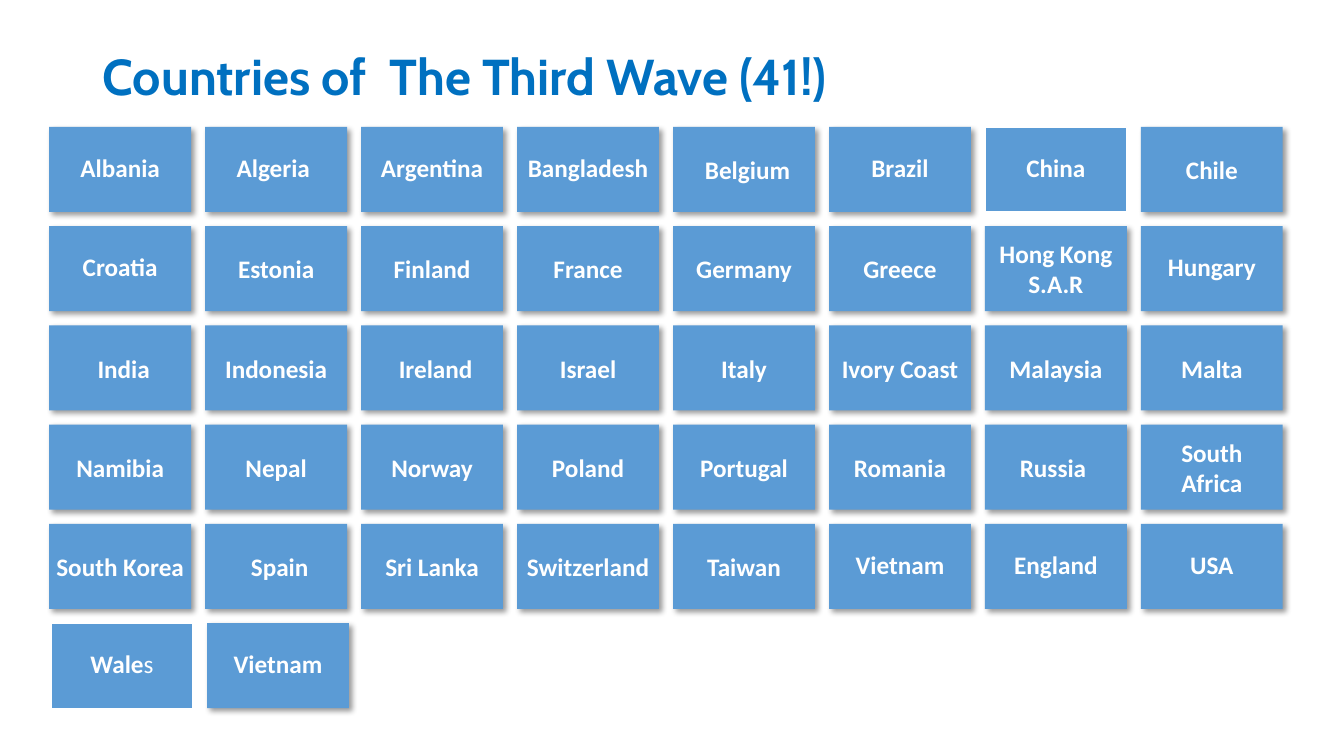
from dataclasses import dataclass

from lxml import etree
from pptx import Presentation
from pptx.dml.color import RGBColor
from pptx.enum import shapes, text
from pptx.oxml import ns
from pptx.util import Pt


@dataclass(frozen=True)
class Theme:
    title_color: RGBColor = RGBColor(0x00, 0x70, 0xC0)
    tile_color: RGBColor = RGBColor(0x5B, 0x9B, 0xD5)
    white: RGBColor = RGBColor(0xFF, 0xFF, 0xFF)
    shadow_color: str = "000000"
    title_font: str = "Cabin"
    tile_font: str = "Calibri"
    title_size: int = 36
    tile_size: int = 18


THEME = Theme()

COUNTRIES = [
    ["Albania", "Algeria ", "Argentina", "Bangladesh", "Belgium ", "Brazil", "China", "Chile"],
    ["Croatia", "Estonia", "Finland", "France", "Germany", "Greece", "Hong Kong S.A.R", "Hungary"],
    ["India ", "Indonesia", "Ireland ", "Israel", "Italy", "Ivory Coast", "Malaysia", "Malta"],
    ["Namibia", "Nepal", "Norway", "Poland", "Portugal", "Romania", "Russia ", "South Africa"],
    ["South Korea", "Spain ", "Sri Lanka", "Switzerland", "Taiwan", "Vietnam", "England", "USA"],
    ["Wales", "Vietnam"],
]
TIGHT = {
    "Albania", "Algeria ", "Argentina", "Bangladesh", "Brazil", "China",
    "Croatia", "Hungary", "Vietnam", "England", "USA", "Wales",
}
LEFT_TO_RIGHT = {"Algeria ", "Argentina", "Russia ", "Vietnam"}
OUTLINED = {"China", "Wales"}
REGULAR_ENDINGS = {"Wales": "s"}

GRID_LEFT, GRID_TOP = 35.2, 90.6
COLUMN_STEP, ROW_STEP = 111.4, 70.9
TILE_WIDTH, TILE_HEIGHT = 101.3, 60.8
LAST_ROW_SHIFT = 1.3


def style_span(span, font, size, color, bold=True):
    span.font.name = font
    span.font.size = Pt(size)
    span.font.color.rgb = color
    span.font.bold = bold


def add_title(page, wording):
    box = page.shapes.title
    box.left, box.top, box.width, box.height = Pt(66.2), Pt(23), Pt(675.4), Pt(67.7)
    frame = box.text_frame
    frame.text = wording
    frame.auto_size = text.MSO_AUTO_SIZE.NONE
    frame.vertical_anchor = text.MSO_ANCHOR.MIDDLE
    para = frame.paragraphs[0]
    para.alignment = text.PP_ALIGN.LEFT
    para.line_spacing = 0.9
    style_span(para.runs[0], THEME.title_font, THEME.title_size, THEME.title_color)


def add_shadow(box):
    effects = box._element.spPr.find(ns.qn("a:effectLst"))
    shadow = etree.SubElement(
        effects, ns.qn("a:outerShdw"),
        blurRad=str(Pt(4)), dist=str(Pt(3)), dir="2700000", algn="tl", rotWithShape="0",
    )
    color = etree.SubElement(shadow, ns.qn("a:srgbClr"), val=THEME.shadow_color)
    etree.SubElement(color, ns.qn("a:alpha"), val="40000")


def write_country(para, country):
    ending = REGULAR_ENDINGS.get(country, "")
    para.text = country.removesuffix(ending)
    para.alignment = text.PP_ALIGN.CENTER
    if country not in LEFT_TO_RIGHT:
        para._p.get_or_add_pPr().set("rtl", "1")
    if country in TIGHT:
        para.line_spacing = 0.9
        para.space_after = Pt(6.3)
    style_span(para.runs[0], THEME.tile_font, THEME.tile_size, THEME.white)
    if ending:
        span = para.add_run()
        span.text = ending
        style_span(span, THEME.tile_font, THEME.tile_size, THEME.white, bold=False)


def add_tile(page, country, left, top):
    box = page.shapes.add_shape(
        shapes.MSO_SHAPE.RECTANGLE, Pt(left), Pt(top), Pt(TILE_WIDTH), Pt(TILE_HEIGHT)
    )
    box.shadow.inherit = False
    box.fill.solid()
    box.fill.fore_color.rgb = THEME.tile_color
    if country in OUTLINED:
        box.line.color.rgb = THEME.white
        box.line.width = Pt(1)
    else:
        box.line.fill.background()
        add_shadow(box)
    frame = box.text_frame
    frame.word_wrap = True
    frame.vertical_anchor = text.MSO_ANCHOR.MIDDLE
    frame.margin_left = frame.margin_right = Pt(5)
    frame.margin_top = frame.margin_bottom = Pt(5)
    write_country(frame.paragraphs[0], country)


def add_country_grid(page):
    for row, countries in enumerate(COUNTRIES):
        shift = LAST_ROW_SHIFT if row == len(COUNTRIES) - 1 else 0
        for column, country in enumerate(countries):
            left = GRID_LEFT + column * COLUMN_STEP + shift
            add_tile(page, country, left, GRID_TOP + row * ROW_STEP)


def main():
    deck = Presentation()
    deck.slide_width, deck.slide_height = Pt(960), Pt(540)
    page = deck.slides.add_slide(deck.slide_layouts[5])
    add_title(page, "Countries of  The Third Wave (41!)")
    add_country_grid(page)
    deck.save("out.pptx")


if __name__ == "__main__":
    main()
